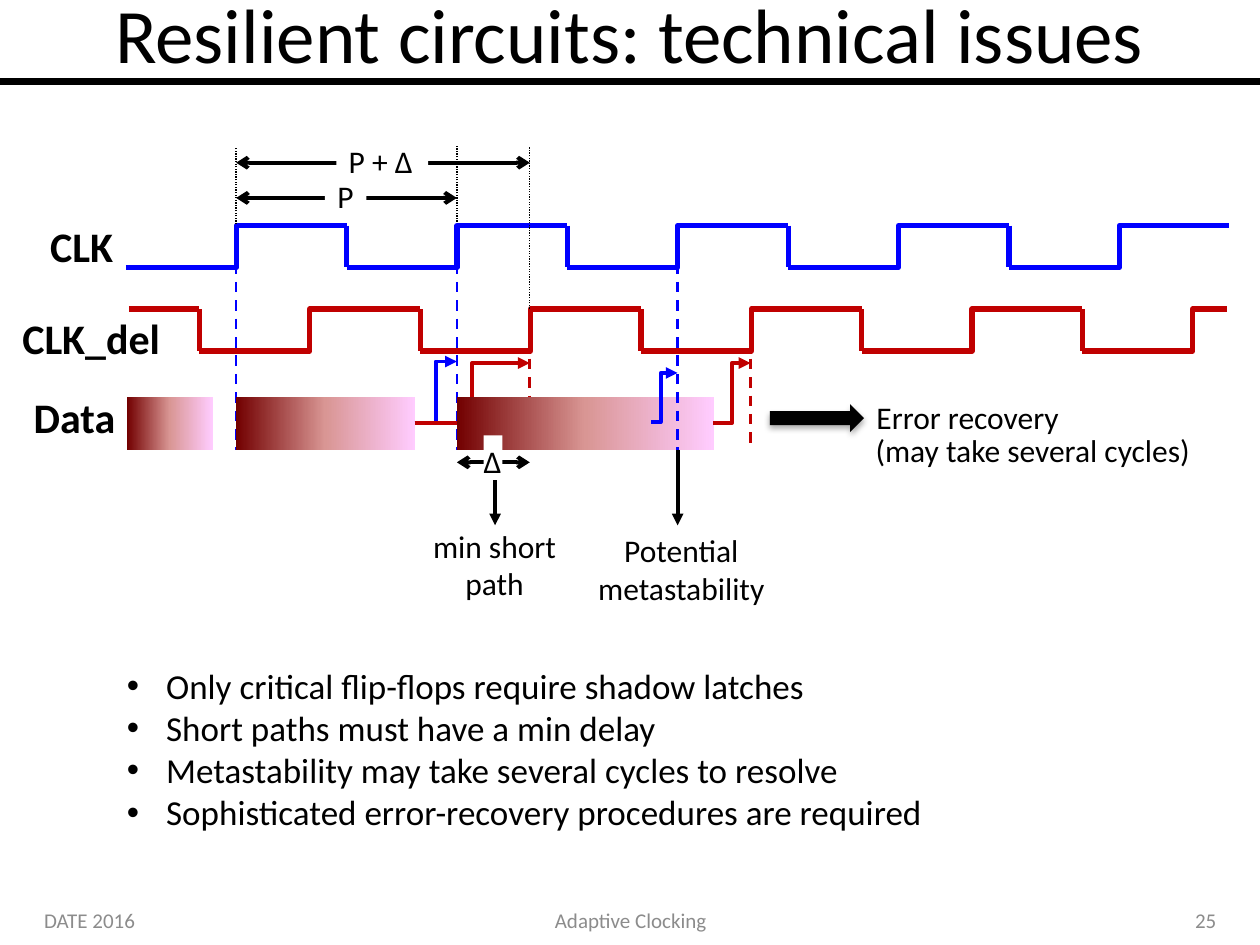
from copy import deepcopy
from dataclasses import dataclass
from typing import Any

from lxml.etree import SubElement as Sub
from pptx import Presentation
from pptx.dml.color import RGBColor as Rgb
from pptx.enum.dml import MSO_LINE as Dash
from pptx.enum.shapes import MSO_CONNECTOR as Link, MSO_SHAPE as Form
from pptx.enum.text import MSO_ANCHOR as Anchor, PP_ALIGN as Align
from pptx.oxml.ns import qn
from pptx.util import Cm, Pt

HUES = {
    "ink": "000000", "paper": "FFFFFF", "grey": "8C8C8C",
    "blue": "0000FF", "red": "C00000",
    "dark": "720000", "rose": "D99694", "pink": "FFCCFF",
}
PER = 4.45
LAG = 1.47


def hue(name):
    return Rgb.from_string(HUES[name])


@dataclass
class Area:
    slide: Any
    x: float
    y: float
    w: float = 0
    h: float = 0

    def spot(self, x, y):
        return Cm(self.x + x), Cm(self.y + y)

    def line(self, x1, y1, x2, y2, col="ink", wide=2.25, dash=None,
             head=None, tail=None, bend=None):
        kind = Link.ELBOW if bend else Link.STRAIGHT
        link = self.slide.shapes.add_connector(
            kind, *self.spot(x1, y1), *self.spot(x2, y2))
        link.line.color.rgb = hue(col)
        link.line.width = Pt(wide)
        if dash:
            link.line.dash_style = dash
        props = link._element.spPr
        if bend:
            guides = props.find(qn("a:prstGeom")).find(qn("a:avLst"))
            Sub(guides, qn("a:gd"), name="adj1", fmla=f"val {round(bend * 100000)}")
        pen = link.line._get_or_add_ln()
        for tag, tip in (("a:headEnd", head), ("a:tailEnd", tail)):
            if tip:
                Sub(pen, qn(tag), type=tip)
        Sub(props, qn("a:effectLst"))

    def shape(self, form, x, y, w, h):
        item = self.slide.shapes.add_shape(form, *self.spot(x, y), Cm(w), Cm(h))
        item.shadow.inherit = False
        item.line.fill.background()
        return item

    def text(self, items, x, y, w, h, size=18, col="ink", bold=False,
             align=Align.LEFT, mid=False, wrap=False, fill=None):
        box = self.slide.shapes.add_textbox(*self.spot(x, y), Cm(w), Cm(h))
        if fill:
            box.fill.solid()
            box.fill.fore_color.rgb = hue(fill)
        frame = box.text_frame
        frame.word_wrap = wrap
        frame.vertical_anchor = Anchor.MIDDLE if mid else Anchor.TOP
        for i, item in enumerate(items):
            par = frame.add_paragraph() if i else frame.paragraphs[0]
            par.text = item
            par.alignment = align
            par.font.name = "Calibri"
            par.font.size = Pt(size)
            par.font.bold = bold
            par.font.color.rgb = hue(col)
        return frame


def title(area):
    area.line(0, 1.65, area.w, 1.65, wide=4)
    area.text(["Resilient circuits: technical issues"], 1.27, -0.28,
              area.w - 2.54, 1.9, 44, align=Align.CENTER, mid=True, wrap=True)


def footer(area):
    for item, x, w, align in (
        ("DATE 2016", 0, 5.93, Align.LEFT),
        ("Adaptive Clocking", 8.05, 8.05, Align.CENTER),
        ("25", area.w - 5.93, 5.93, Align.RIGHT),
    ):
        area.text([item], x, 0, w, area.h, 12, "grey", align=align, mid=True, wrap=True)


def clock(area, col, lead=0):
    if lead:
        area.line(0, 0, lead, 0, col, 3)
    for k in range(5):
        x = lead + k * PER
        end = min(x + PER, area.w)
        if x:
            area.line(x, 0, x, area.h, col, 3)
        area.line(x, area.h, end, 0, col, 3, bend=PER / 2 / (end - x))


def labels(area):
    for item, x, y, w in (("CLK", 0.56, 0, 1.8), ("CLK_del", 0, 1.85, 3.33),
                          ("Data", 0.23, 3.45, 2.18)):
        area.text([item], x, y, w, 1.27, 24, bold=True)


def block(area, x, w):
    item = area.shape(Form.FLOWCHART_PROCESS, x, 0, w, area.h)
    item.fill.gradient()
    item.fill.gradient_angle = 0
    stops = item._element.spPr.find(qn("a:gradFill")).find(qn("a:gsLst"))
    stops.append(deepcopy(stops[-1]))
    for stop, pos, col in zip(item.fill.gradient_stops, (0, 0.5, 1),
                              ("dark", "rose", "pink")):
        stop.position = pos
        stop.color.rgb = hue(col)


def data(area):
    def mark(x, top, col):
        area.line(x, top, x, area.h, col, 1.5, Dash.DASH)

    def hop(x1, y1, x2, y2, col, bend=0.5):
        area.line(x1, y1, x2, y2, col, tail="triangle", bend=bend)

    block(area, -2.2, 1.73)
    mark(0, -2.69, "blue")
    block(area, 0, 3.61)
    mark(PER, -2.69, "blue")
    mark(PER + LAG, -1.14, "red")
    hop(3.6, 0.53, PER, -0.71, "blue")
    hop(3.6, 0.53, PER + LAG, -0.68, "red")
    mark(2 * PER + LAG, -1.14, "red")
    block(area, PER, 5.18)
    hop(8.37, 0.51, 2 * PER, -0.48, "blue", 0.36)
    hop(9.62, 0.53, 2 * PER + LAG, -0.68, "red")
    mark(2 * PER, -2.69, "blue")


def span(area, y, w, item, x, wide):
    area.line(0, y, w, y, head="arrow", tail="arrow")
    return area.text([item], x, y - 0.54, wide, 1.02, fill="paper")


def periods(area):
    span(area, 1.07, PER, "P", 1.79, 0.84)
    for x, top, end in ((0, 0.05, 1.6), (PER, 0, 1.55), (PER + LAG, 0.05, 3.3)):
        area.line(x, end, x, top, wide=0.75, dash=Dash.ROUND_DOT)
    span(area, 0.36, PER + LAG, "P + Δ", 2.02, 1.85)


def causes(area):
    frame = span(area, 0.25, LAG, "Δ", 0.54, 0.38)
    frame.margin_left = frame.margin_right = 0
    for x, top, item, left, y, w in (
        (0.77, 0.61, "min short\npath", -0.75, 1.42, 3.02),
        (PER, 0, "Potential\nmetastability", 2.58, 1.52, 3.89),
    ):
        area.line(x, top, x, 1.52, tail="triangle")
        area.text([item], left, y, w, 1.8, align=Align.CENTER)


def error(area):
    arrow = area.shape(Form.RIGHT_ARROW, 0, 0.25, 1.9, 0.56)
    arrow.fill.solid()
    arrow.fill.fore_color.rgb = hue("ink")
    glow = Sub(arrow._element.spPr.find(qn("a:effectLst")), qn("a:outerShdw"),
               blurRad=str(Pt(3.5)), dist=str(Pt(2.2)), dir="5400000", rotWithShape="0")
    tint = Sub(glow, qn("a:srgbClr"), val=HUES["ink"])
    Sub(tint, qn("a:alpha"), val="32000")
    area.text(["Error recovery"], 1.9, 0, 4.22, 1.02)
    area.text(["(may take several cycles)"], 1.88, 0.66, 6.91, 1.02)


def points(area):
    frame = area.text([
        "Only critical flip-flops require shadow latches",
        "Short paths must have a min delay",
        "Metastability may take several cycles to resolve",
        "Sophisticated error-recovery procedures are required",
    ], 0, 0, area.w, area.h, 20)
    for par in frame.paragraphs:
        props = par._p.get_or_add_pPr()
        props.set("marL", str(Cm(0.79)))
        props.set("indent", str(-Cm(0.79)))
        font = Sub(props, qn("a:buFont"), typeface="Arial")
        mark = Sub(props, qn("a:buChar"), char="•")
        props.insert(0, font)
        props.insert(1, mark)


def main():
    deck = Presentation()
    deck.slide_width, deck.slide_height = Cm(25.4), Cm(19.05)
    slide = deck.slides.add_slide(deck.slide_layouts[6])
    title(Area(slide, 0, 0, 25.4, 1.9))
    footer(Area(slide, 0.64, 18.03, 24.13, 1.02))
    clock(Area(slide, 2.54, 4.55, 22.23, 0.84), "blue")
    clock(Area(slide, 2.6, 6.23, 22.13, 0.85), "red", 1.42)
    labels(Area(slide, 0.2, 4.32))
    data(Area(slide, 4.76, 8, 12, 1.07))
    periods(Area(slide, 4.76, 2.92))
    causes(Area(slide, 9.21, 9.07))
    error(Area(slide, 15.52, 7.9))
    points(Area(slide, 2.31, 13.28, 16.74, 3.68))
    deck.save("out.pptx")


if __name__ == "__main__":
    main()
